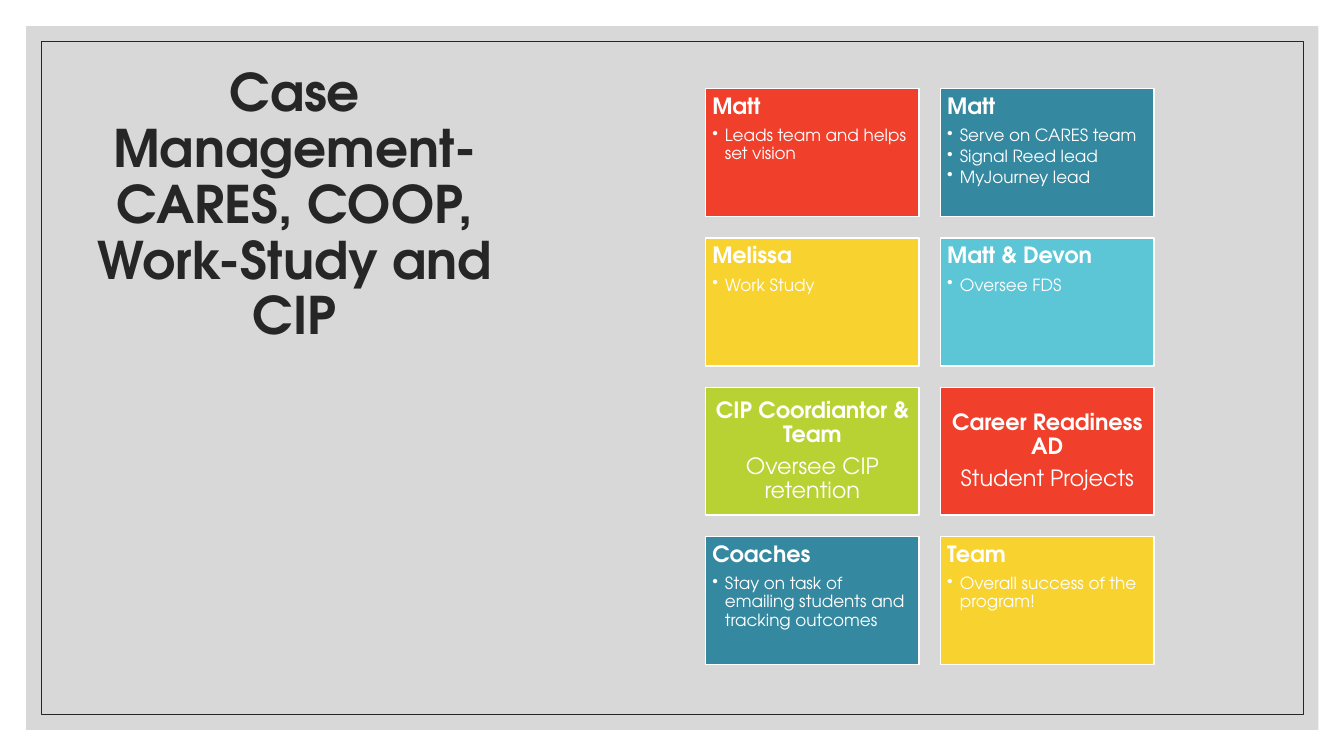
import pptx
import pptx.dml.color
import pptx.enum.shapes
import pptx.enum.text
import pptx.oxml.ns
import pptx.util
from lxml import etree

Pt = pptx.util.Pt
RGBColor = pptx.dml.color.RGBColor
ALIGN = pptx.enum.text.PP_ALIGN
ANCHOR = pptx.enum.text.MSO_ANCHOR
qn = pptx.oxml.ns.qn

FONT = "TeX Gyre Adventor"
WHITE = RGBColor(0xFF, 0xFF, 0xFF)
INK = RGBColor(0x26, 0x26, 0x26)
GRAY = RGBColor(0xBF, 0xBF, 0xBF)
RED = RGBColor(0xF0, 0x3F, 0x2B)
BLUE = RGBColor(0x34, 0x88, 0xA0)
YELLOW = RGBColor(0xF8, 0xD2, 0x2F)
CYAN = RGBColor(0x5C, 0xC6, 0xD6)
GREEN = RGBColor(0xB8, 0xD2, 0x33)

TITLE = "Case Management- CARES, COOP, Work-Study and CIP"
# Heading, details, fill, whether the card is a bulleted list
CARDS = [
    ("Matt", ["Leads team and helps set vision"], RED, True),
    ("Matt", ["Serve on CARES team", "Signal Reed lead", "MyJourney lead"], BLUE, True),
    ("Melissa", ["Work Study"], YELLOW, True),
    ("Matt & Devon", ["Oversee FDS"], CYAN, True),
    ("CIP Coordiantor & Team", ["Oversee CIP retention"], GREEN, False),
    ("Career Readiness AD", ["Student Projects"], RED, False),
    ("Coaches", ["Stay on task of emailing students and tracking outcomes"], BLUE, True),
    ("Team", ["Overall success of the program!"], YELLOW, True),
]
COLUMNS = 2
GAP = 15.2


def add_rectangle(slide, left, top, width, height):
    shape = slide.shapes.add_shape(
        pptx.enum.shapes.MSO_SHAPE.RECTANGLE, Pt(left), Pt(top), Pt(width), Pt(height))
    shape.shadow.inherit = False
    return shape


def format_paragraph(paragraph, size, color, bold, alignment, space_after=0):
    paragraph.alignment = alignment
    paragraph.line_spacing = 0.9
    paragraph.space_before = Pt(0)
    paragraph.space_after = Pt(space_after)
    for run in paragraph.runs:
        run.font.name = FONT
        run.font.size = Pt(size)
        run.font.bold = bold
        run.font.color.rgb = color


def add_bullet(paragraph):
    properties = paragraph._p.get_or_add_pPr()
    properties.set("marL", str(Pt(9)))
    properties.set("indent", str(Pt(-9)))
    etree.SubElement(properties, qn("a:buChar"), char="•")


def add_frame(slide, left, top, width, height):
    """Draw the translucent panel and its inner outline behind the title."""
    panel = add_rectangle(slide, left, top, width, height)
    panel.fill.solid()
    panel.fill.fore_color.rgb = GRAY
    color = panel._element.spPr.find(".//" + qn("a:srgbClr"))
    etree.SubElement(color, qn("a:alpha"), val="60000")
    panel.line.fill.background()

    inset = 10.8
    outline = add_rectangle(
        slide, left + inset, top + inset, width - 2 * inset, height - 2 * inset)
    outline.fill.background()
    outline.line.color.rgb = INK
    outline.line.width = Pt(0.5)
    for shape in (panel, outline):
        slide.shapes.title._element.addprevious(shape._element)


def place_title(slide, left, top, width, height):
    title = slide.shapes.title
    title.left, title.top, title.width, title.height = map(Pt, (left, top, width, height))
    text_frame = title.text_frame
    text_frame.text = TITLE
    text_frame.word_wrap = True
    text_frame.auto_size = pptx.enum.text.MSO_AUTO_SIZE.NONE
    text_frame.vertical_anchor = ANCHOR.TOP
    format_paragraph(text_frame.paragraphs[0], 37, INK, True, ALIGN.CENTER)


def add_card(slide, left, top, width, height, heading, details, fill, bulleted):
    card = add_rectangle(slide, left, top, width, height)
    card.fill.solid()
    card.fill.fore_color.rgb = fill
    card.line.color.rgb = WHITE
    card.line.width = Pt(1)

    text_frame = card.text_frame
    text_frame.word_wrap = True
    text_frame.margin_left = text_frame.margin_right = Pt(4.8)
    text_frame.margin_top = text_frame.margin_bottom = Pt(4.8)
    text_frame.vertical_anchor = ANCHOR.TOP if bulleted else ANCHOR.MIDDLE
    alignment = ALIGN.LEFT if bulleted else ALIGN.CENTER
    text_frame.text = heading
    format_paragraph(text_frame.paragraphs[0], 16, WHITE, True, alignment, 5.6)
    for detail in details:
        paragraph = text_frame.add_paragraph()
        paragraph.text = detail
        if bulleted:
            paragraph.level = 1
            format_paragraph(paragraph, 12, WHITE, False, alignment, 1.8)
            add_bullet(paragraph)
        else:
            format_paragraph(paragraph, 16, WHITE, False, alignment, 5.6)


def add_card_grid(slide, left, top, width, height):
    rows = len(CARDS) // COLUMNS
    card_width = (width - GAP * (COLUMNS - 1)) / COLUMNS
    card_height = (height - GAP * (rows - 1)) / rows
    for index, card in enumerate(CARDS):
        row, column = divmod(index, COLUMNS)
        add_card(slide, left + column * (card_width + GAP),
                 top + row * (card_height + GAP), card_width, card_height, *card)


def main():
    presentation = pptx.Presentation()
    presentation.slide_width = Pt(960)
    presentation.slide_height = Pt(540)
    slide = presentation.slides.add_slide(presentation.slide_layouts[5])
    add_frame(slide, 18.7, 18.7, 923, 502.6)
    place_title(slide, 45.4, 43.9, 330.5, 449.3)
    add_card_grid(slide, 504, 63.3, 320.4, 411.4)
    presentation.save("out.pptx")


if __name__ == "__main__":
    main()
